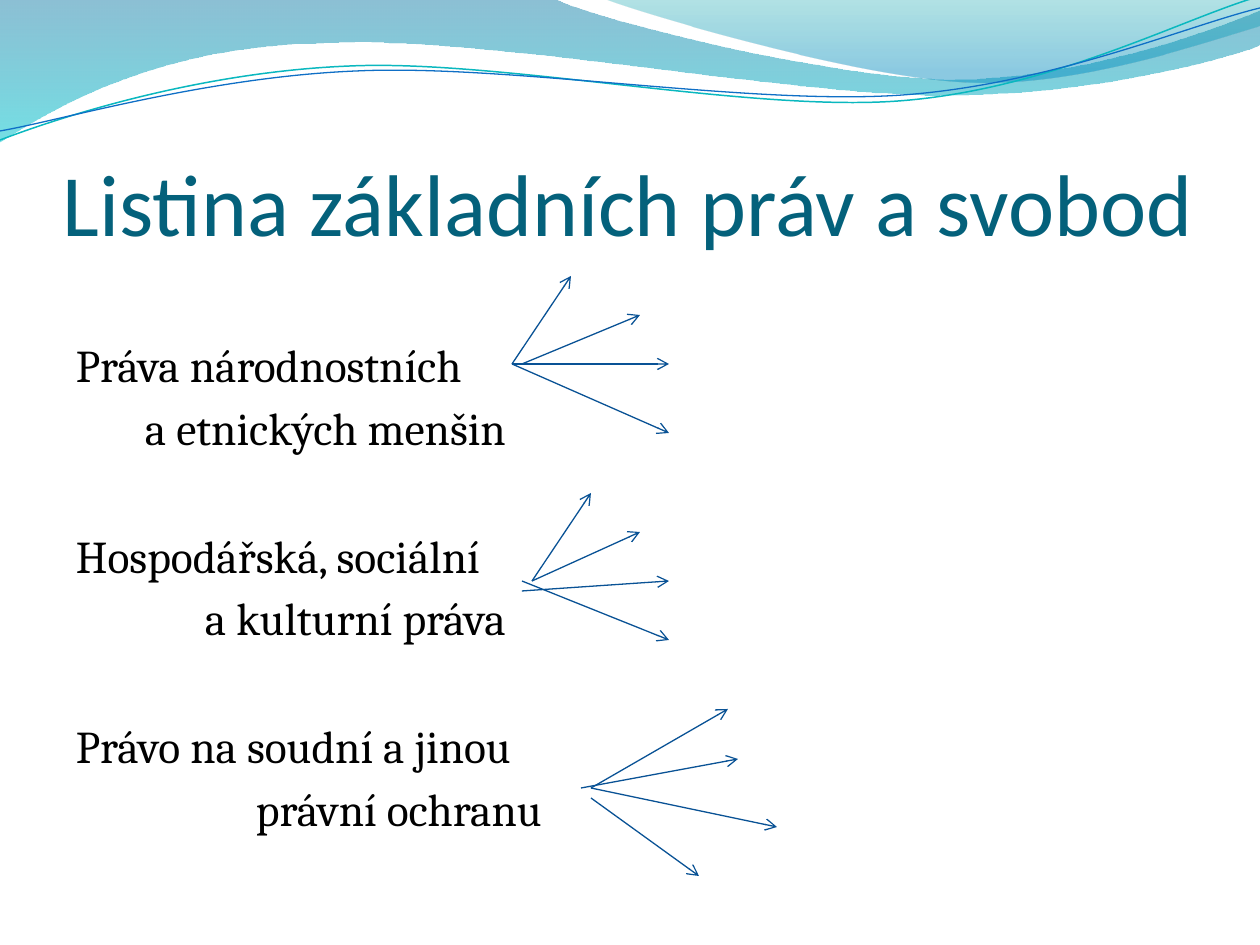
import lxml.etree
import pptx
import pptx.dml.color
import pptx.enum.shapes
import pptx.enum.text
import pptx.oxml.ns
import pptx.util

SCALE = 914400 / 126
TITLE_TEAL = pptx.dml.color.RGBColor(0x04, 0x61, 0x7B)
BLACK = pptx.dml.color.RGBColor(0x00, 0x00, 0x00)
ARROW_BLUE = pptx.dml.color.RGBColor(0x09, 0x52, 0x95)
LINE_TEAL = pptx.dml.color.RGBColor(0x0A, 0xB8, 0xBF)
LINE_BLUE = pptx.dml.color.RGBColor(0x0F, 0x6F, 0xC6)
DEEP_BLUE = pptx.dml.color.RGBColor(0x00, 0x74, 0xA1)
CYAN = pptx.dml.color.RGBColor(0x00, 0xC6, 0xCF)
SEA_GREEN = pptx.dml.color.RGBColor(0x00, 0xA1, 0xA9)
SKY_BLUE = pptx.dml.color.RGBColor(0x00, 0x8B, 0xBF)

deck = pptx.Presentation()
deck.slide_width = round(1260 * SCALE)
deck.slide_height = round(945 * SCALE)
page = deck.slides.add_slide(deck.slide_layouts[6])


def add_curve(start, segments, close):
    builder = page.shapes.build_freeform(*start, scale=SCALE)
    builder.add_line_segments([point for segment in segments for point in segment], close=close)
    curve = builder.convert_to_shape()
    curve.shadow.inherit = False
    steps = iter(curve._element.spPr.findall(".//" + pptx.oxml.ns.qn("a:lnTo")))
    for segment in segments:
        first, *others = [next(steps) for point in segment]
        if others:
            first.tag = pptx.oxml.ns.qn("a:cubicBezTo")
            for other in others:
                first.append(other[0])
                other.getparent().remove(other)
    return curve


def add_text(lines, left, top, width, height, *, font, size, color,
             side_inset=0, top_inset=0, anchor=pptx.enum.text.MSO_ANCHOR.TOP):
    box = page.shapes.add_textbox(*(round(v * SCALE) for v in (left, top, width, height)))
    frame = box.text_frame
    frame.word_wrap = True
    frame.vertical_anchor = anchor
    frame.margin_left = frame.margin_right = round(side_inset * SCALE)
    frame.margin_top = round(top_inset * SCALE)
    frame.margin_bottom = 0
    for index, (text, indent, space) in enumerate(lines):
        para = frame.paragraphs[0] if index == 0 else frame.add_paragraph()
        para.space_before = pptx.util.Pt(space)
        para._p.get_or_add_pPr().set("marL", str(round(indent * SCALE)))
        span = para.add_run()
        span.text = text
        span.font.name = font
        span.font.size = pptx.util.Pt(size)
        span.font.color.rgb = color


waves = [
    ((0, 0), [
        ((554, -1),),
        ((600, 21), (837, 79), (955, 79)),
        ((1074, 79), (1207, 33), (1260, 11)),
        ((1261, 45),),
        ((1239, 55), (1096, 96), (940, 95)),
        ((784, 95), (481, 35), (324, 43)),
        ((163, 45), (58, 105), (-1, 142)),
    ], [(0, DEEP_BLUE, 45), (1, CYAN, 55)]),
    ((604, -1), [
        ((641, 14), (859, 78), (969, 82)),
        ((1079, 87), (1211, 40), (1260, 26)),
        ((1260, 0),),
    ], [(0, SEA_GREEN, 30), (0.8, SKY_BLUE, 45)]),
]
for start, segments, stops in waves:
    wave = add_curve(start, segments, True)
    wave.line.fill.background()
    wave.fill.gradient()
    wave.fill.gradient_angle = 270
    for stop, (position, color, opacity) in zip(wave.fill.gradient_stops, stops):
        stop.position = position
        stop.color.rgb = color
    tints = wave._element.spPr.findall(".//" + pptx.oxml.ns.qn("a:srgbClr"))
    for tint, (position, color, opacity) in zip(tints, stops):
        lxml.etree.SubElement(tint, pptx.oxml.ns.qn("a:alpha")).set("val", str(opacity * 1000))

ripples = [
    ((0, 140), [
        ((60, 117), (199, 72), (349, 66)),
        ((498, 59), (747, 112), (898, 101)),
        ((1049, 90), (1182, 19), (1257, -3)),
    ], LINE_TEAL, 0.85),
    ((0, 131), [
        ((59, 121), (207, 77), (357, 71)),
        ((508, 64), (752, 106), (903, 95)),
        ((1053, 84), (1186, 26), (1260, 8)),
    ], LINE_BLUE, 0.75),
]
for start, segments, color, weight in ripples:
    ripple = add_curve(start, segments, False)
    ripple.fill.background()
    ripple.line.color.rgb = color
    ripple.line.width = pptx.util.Pt(weight)

add_text([("Listina základních práv a svobod", 0, 0)], 63, 97, 1134, 157,
         font="Calibri", size=50, color=TITLE_TEAL,
         anchor=pptx.enum.text.MSO_ANCHOR.BOTTOM)

LINE_GAP = 4.7
GROUP_GAP = 41.9
rights = [
    ("Práva národnostních", 0, 0),
    ("a etnických menšin", 69, LINE_GAP),
    ("Hospodářská, sociální", 0, GROUP_GAP),
    ("a kulturní práva", 129, LINE_GAP),
    ("Právo na soudní a jinou", 0, GROUP_GAP),
    ("právní ochranu", 180, LINE_GAP),
]
add_text(rights, 63, 267, 1134, 605, font="Cambria", size=26, color=BLACK,
         side_inset=13, top_inset=70)

arrows = [
    ((522, 364), (640, 315)),
    ((512, 364), (669, 364)),
    ((512, 364), (669, 433)),
    ((512, 364), (571, 276)),
    ((532, 581), (591, 493)),
    ((532, 581), (640, 532)),
    ((522, 591), (669, 581)),
    ((522, 581), (669, 640)),
    ((591, 788), (728, 709)),
    ((581, 788), (738, 759)),
    ((591, 788), (777, 827)),
    ((591, 798), (699, 876)),
]
for start, end in arrows:
    arrow = page.shapes.add_connector(pptx.enum.shapes.MSO_CONNECTOR.STRAIGHT,
                                      *(round(v * SCALE) for v in start + end))
    arrow.line.color.rgb = ARROW_BLUE
    arrow.line.width = pptx.util.Pt(0.75)
    outline = arrow.line._get_or_add_ln()
    lxml.etree.SubElement(outline, pptx.oxml.ns.qn("a:tailEnd")).set("type", "arrow")
    lxml.etree.SubElement(arrow._element.spPr, pptx.oxml.ns.qn("a:effectLst"))

deck.save("out.pptx")
